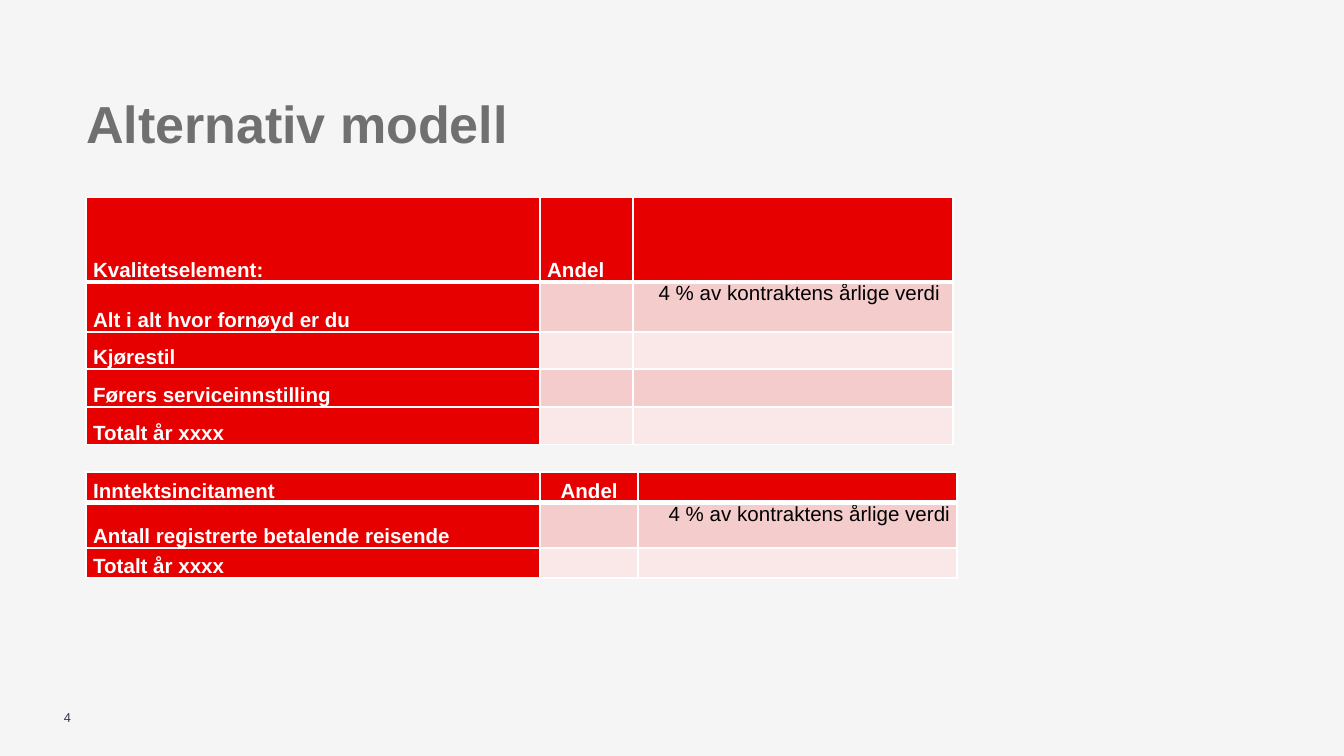
from dataclasses import dataclass

from lxml import etree
from pptx import Presentation
from pptx.dml.color import RGBColor
from pptx.enum import text
from pptx.oxml import ns
from pptx.util import Cm, Pt

FONT = "Arial"
RED, WHITE, BLACK = "E60000", "FFFFFF", "000000"
BANDS = ("F5CCCC", "FAE7E7")
LEFT = 1.63
SIZE = 11
SHARE = "4 % av kontraktens årlige verdi"


@dataclass
class Grid:
    """One table; lengths are in centimetres."""
    top: float
    columns: list[float]
    rows: list[float]
    labels: list[str]
    share_align: text.PP_ALIGN
    note_right: float


GRIDS = [
    Grid(3.73, [8.58, 1.75, 6.05], [1.6, 0.94, 0.71, 0.71, 0.71],
         ["Kvalitetselement:", "Alt i alt hvor fornøyd er du", "Kjørestil",
          "Førers serviceinnstilling", "Totalt år xxxx"],
         text.PP_ALIGN.LEFT, 0.24),
    Grid(8.92, [8.58, 1.85, 6.03], [0.58, 0.86, 0.56],
         ["Inntektsincitament", "Antall registrerte betalende reisende",
          "Totalt år xxxx"],
         text.PP_ALIGN.CENTER, 0.13),
]


def rgb(value: str) -> RGBColor:
    return RGBColor.from_string(value)


def add_span(para, words: str, size: float, color: str, bold: bool = False) -> None:
    span = para.add_run()
    span.text = words
    span.font.name = FONT
    span.font.size = Pt(size)
    span.font.bold = bold
    span.font.color.rgb = rgb(color)


def clear_frame(frame) -> None:
    """Remove the insets and centre the text vertically."""
    frame.margin_left = frame.margin_right = 0
    frame.margin_top = frame.margin_bottom = 0
    frame.vertical_anchor = text.MSO_ANCHOR.MIDDLE


def set_borders(cell, top: float, bottom: float) -> None:
    """Draw white borders; they must precede the fill in the cell's XML."""
    properties = cell._tc.get_or_add_tcPr()
    widths = {"a:lnL": 1, "a:lnR": 1, "a:lnT": top, "a:lnB": bottom}
    for tag, width in widths.items():
        line = etree.SubElement(properties, ns.qn(tag), w=str(Pt(width)))
        fill = etree.SubElement(line, ns.qn("a:solidFill"))
        etree.SubElement(fill, ns.qn("a:srgbClr"), val=WHITE)


def fill_cell(cell, grid: Grid, row: int, column: int) -> None:
    set_borders(cell, 3 if row == 1 else 1, 3 if row == 0 else 1)
    is_heading = row == 0 or column == 0
    cell.fill.solid()
    cell.fill.fore_color.rgb = rgb(RED if is_heading else BANDS[(row - 1) % 2])
    cell.margin_left = cell.margin_right = Cm(0.13)
    cell.margin_top = cell.margin_bottom = 0
    cell.vertical_anchor = text.MSO_ANCHOR.BOTTOM

    para = cell.text_frame.paragraphs[0]
    if column == 0:
        add_span(para, grid.labels[row], SIZE, WHITE, True)
    elif (row, column) == (0, 1):
        para.alignment = grid.share_align
        add_span(para, "Andel", SIZE, WHITE, True)
    elif (row, column) == (1, 2):
        cell.vertical_anchor = text.MSO_ANCHOR.TOP
        cell.margin_right = Cm(grid.note_right)
        para.alignment = text.PP_ALIGN.RIGHT
        add_span(para, SHARE, SIZE, BLACK)
    else:
        etree.SubElement(para._p, ns.qn("a:endParaRPr"), sz=str(SIZE * 100))


def add_grid(page, grid: Grid) -> None:
    table = page.shapes.add_table(
        len(grid.rows), len(grid.columns), Cm(LEFT), Cm(grid.top),
        Cm(sum(grid.columns)), Cm(sum(grid.rows))).table
    for column, width in zip(table.columns, grid.columns):
        column.width = Cm(width)
    for row, height in zip(table.rows, grid.rows):
        row.height = Cm(height)
    for row in range(len(grid.rows)):
        for column in range(len(grid.columns)):
            fill_cell(table.cell(row, column), grid, row, column)


def add_title(page, words: str) -> None:
    title = page.shapes.title
    title.left, title.top = Cm(LEFT), Cm(1.85)
    title.width, title.height = Cm(22.17), Cm(1.07)
    clear_frame(title.text_frame)
    para = title.text_frame.paragraphs[0]
    para.alignment = text.PP_ALIGN.LEFT
    para.line_spacing = 0.9
    add_span(para, words, 27.9, "707070", True)


def add_page_number(page, number: str) -> None:
    box = page.shapes.add_textbox(Cm(1.21), Cm(13.41), Cm(0.4), Cm(0.3))
    clear_frame(box.text_frame)
    box.text_frame.word_wrap = True
    add_span(box.text_frame.paragraphs[0], number, 6.9, "32374B")


def main() -> None:
    deck = Presentation()
    deck.slide_width, deck.slide_height = Cm(25.4), Cm(14.29)
    page = deck.slides.add_slide(deck.slide_layouts.get_by_name("Title Only"))
    page.background.fill.solid()
    page.background.fill.fore_color.rgb = rgb("F5F5F5")
    add_title(page, "Alternativ modell")
    add_page_number(page, "4")
    for grid in GRIDS:
        add_grid(page, grid)
    deck.save("out.pptx")


if __name__ == "__main__":
    main()
